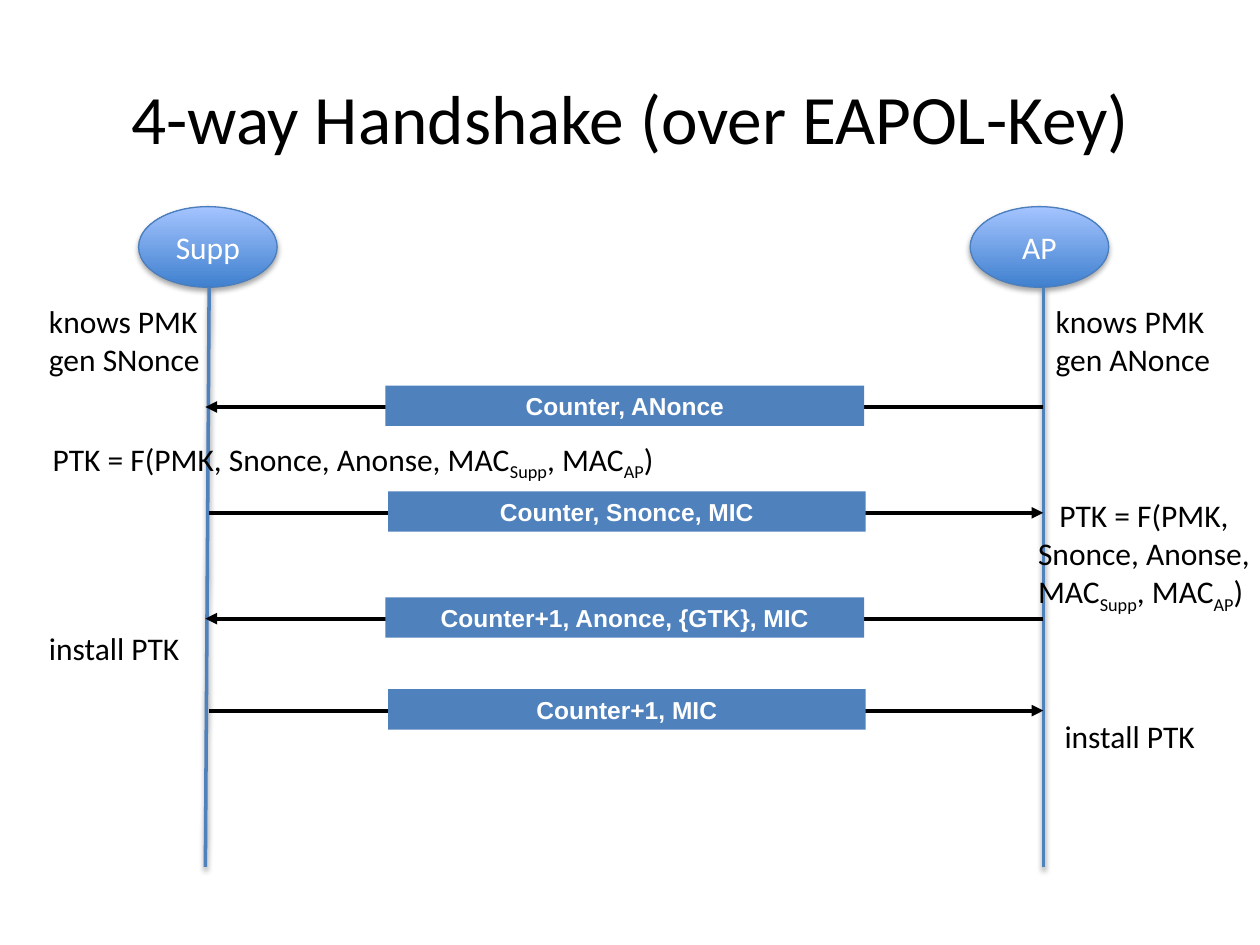
import pptx
import pptx.util
import pptx.dml.color
import pptx.enum.shapes
import pptx.enum.text
import pptx.oxml
import pptx.oxml.ns

RGBColor = pptx.dml.color.RGBColor
BLACK = RGBColor(0x00, 0x00, 0x00)
WHITE = RGBColor(0xFF, 0xFF, 0xFF)
BLUE = RGBColor(0x4F, 0x81, 0xBD)
OUTLINE = RGBColor(0x4B, 0x7E, 0xBC)
DEEP_BLUE = RGBColor(0x3F, 0x80, 0xCE)
PALE_BLUE = RGBColor(0xA4, 0xC4, 0xFF)

COLUMNS, ROWS = 100, 75
SUPP_TOP, SUPP_BOTTOM, AP_LINE = 16.6, 16.3, 82.8
LIFE_TOP, LIFE_BOTTOM = 22.8, 68.8
NAMESPACE = pptx.oxml.ns.nsdecls("a")
Align = pptx.enum.text.PP_ALIGN
Anchor = pptx.enum.text.MSO_ANCHOR
Preset = pptx.enum.shapes.MSO_SHAPE


class SequenceDiagram:
    body_font = "Calibri"
    label_font = "Arial"
    body_size = 18

    def __init__(self, presentation):
        self.cell_width = presentation.slide_width / COLUMNS
        self.cell_height = presentation.slide_height / ROWS
        self.slide = presentation.slides.add_slide(presentation.slide_layouts[6])

    def place(self, column, row):
        return round(column * self.cell_width), round(row * self.cell_height)

    def effects(self, element, opacity=None):
        shadow = ""
        if opacity:
            shadow = (
                '<a:outerShdw blurRad="40000" dist="22000" dir="5400000" rotWithShape="0">'
                f'<a:srgbClr val="{BLACK}"><a:alpha val="{opacity * 1000}"/></a:srgbClr>'
                "</a:outerShdw>"
            )
        element.spPr.append(
            pptx.oxml.parse_xml(f"<a:effectLst {NAMESPACE}>{shadow}</a:effectLst>")
        )

    def format_runs(self, paragraph, size, color, font, bold=False):
        for run in paragraph.runs:
            run.font.size = pptx.util.Pt(size)
            run.font.color.rgb = color
            run.font.name = font
            run.font.bold = bold

    def center(self, shape, text, size, color, font, bold=False):
        frame = shape.text_frame
        frame.word_wrap = True
        frame.vertical_anchor = Anchor.MIDDLE
        frame.text = text
        frame.paragraphs[0].alignment = Align.CENTER
        self.format_runs(frame.paragraphs[0], size, color, font, bold)

    def title(self, text):
        shape = self.slide.shapes.add_textbox(*self.place(5, 3), *self.place(90, 12.5))
        self.center(shape, text, 39.6, BLACK, self.body_font)

    def actor(self, name, column):
        shape = self.slide.shapes.add_shape(
            Preset.OVAL, *self.place(column, 16.4), *self.place(11, 6.4)
        )
        shape.fill.gradient()
        shape.fill.gradient_angle = 90
        for stop, color in zip(shape.fill.gradient_stops, (DEEP_BLUE, PALE_BLUE)):
            stop.color.rgb = color
        shape.line.color.rgb = OUTLINE
        shape.line.width = pptx.util.Pt(0.75)
        self.effects(shape._element, 35)
        self.center(shape, name, self.body_size, WHITE, self.body_font)

    def line(self, shapes, start, end, color, width, opacity=None):
        connector = shapes.add_connector(
            pptx.enum.shapes.MSO_CONNECTOR.STRAIGHT, *self.place(*start), *self.place(*end)
        )
        connector.line.color.rgb = color
        connector.line.width = pptx.util.Pt(width)
        self.effects(connector._element, opacity)
        return connector

    def lifeline(self, top_column, bottom_column):
        self.line(self.slide.shapes, (top_column, LIFE_TOP), (bottom_column, LIFE_BOTTOM),
                  BLUE, 2, 38)

    def message(self, text, row, to_supp):
        group = self.slide.shapes.add_group_shape()
        if to_supp:
            start, end, left, width = AP_LINE, SUPP_BOTTOM, 30.6, 38
        else:
            start, end, left, width = SUPP_TOP, AP_LINE, 30.8, 37.9
        arrow = self.line(group.shapes, (start, row), (end, row), BLACK, 2.25)
        arrow.line._get_or_add_ln().append(
            pptx.oxml.parse_xml(f'<a:tailEnd {NAMESPACE} type="triangle"/>')
        )
        label = group.shapes.add_shape(
            Preset.RECTANGLE, *self.place(left, row - 1.7), *self.place(width, 3.2)
        )
        label.shadow.inherit = False
        label.fill.solid()
        label.fill.fore_color.rgb = BLUE
        label.line.fill.background()
        frame = label.text_frame
        frame.margin_left = frame.margin_right = pptx.util.Inches(0.08)
        frame.margin_top = frame.margin_bottom = pptx.util.Inches(0.04)
        self.center(label, text, 14, WHITE, self.label_font, True)

    def note(self, lines, column, row, width, height, first_indent=0):
        shape = self.slide.shapes.add_textbox(
            *self.place(column, row), *self.place(width, height)
        )
        frame = shape.text_frame
        frame.word_wrap = False
        frame.text = "\n".join(lines)
        for paragraph, line in zip(frame.paragraphs, lines):
            parts = line.split("_")
            paragraph.text = parts[0]
            for part in parts[1:]:
                paragraph.add_run().text = part
            self.format_runs(paragraph, self.body_size, BLACK, self.body_font)
            for run in paragraph.runs[1::2]:
                run.font._element.set("baseline", "-25000")
        if first_indent:
            properties = frame.paragraphs[0]._p.get_or_add_pPr()
            properties.set("indent", str(round(first_indent * self.cell_width)))


def main():
    presentation = pptx.Presentation()
    presentation.slide_width = pptx.util.Inches(10)
    presentation.slide_height = pptx.util.Inches(7.5)
    diagram = SequenceDiagram(presentation)

    diagram.title("4-way Handshake (over EAPOL-Key)")
    diagram.actor("Supp", 11)
    diagram.actor("AP", 77)
    diagram.lifeline(SUPP_TOP, SUPP_BOTTOM)
    diagram.lifeline(AP_LINE, AP_LINE)

    messages = (
        ("Counter, ANonce", 32.3, True),
        ("Counter, Snonce, MIC", 40.7, False),
        ("Counter+1, Anonce, {GTK}, MIC", 49.1, True),
        ("Counter+1, MIC", 56.4, False),
    )
    for text, row, to_supp in messages:
        diagram.message(text, row, to_supp)

    diagram.note(("knows PMK", "gen SNonce"), 2.9, 23.5, 14.1, 7.1)
    diagram.note(("knows PMK", "gen ANonce"), 82.8, 23.5, 14.4, 7.1)
    diagram.note(("PTK = F(PMK, Snonce, Anonse, MAC_Supp_, MAC_AP_)",), 3.2, 34.4, 50.9, 4)
    diagram.note(("PTK = F(PMK,", "Snonce, Anonse,", "MAC_Supp_, MAC_AP_)"),
                 81.4, 38.9, 19.2, 10.1, 1.7)
    diagram.note(("install PTK",), 2.9, 49.4, 12.5, 4)
    diagram.note(("install PTK",), 83.5, 56.4, 12.5, 4)

    presentation.save("out.pptx")


if __name__ == "__main__":
    main()
